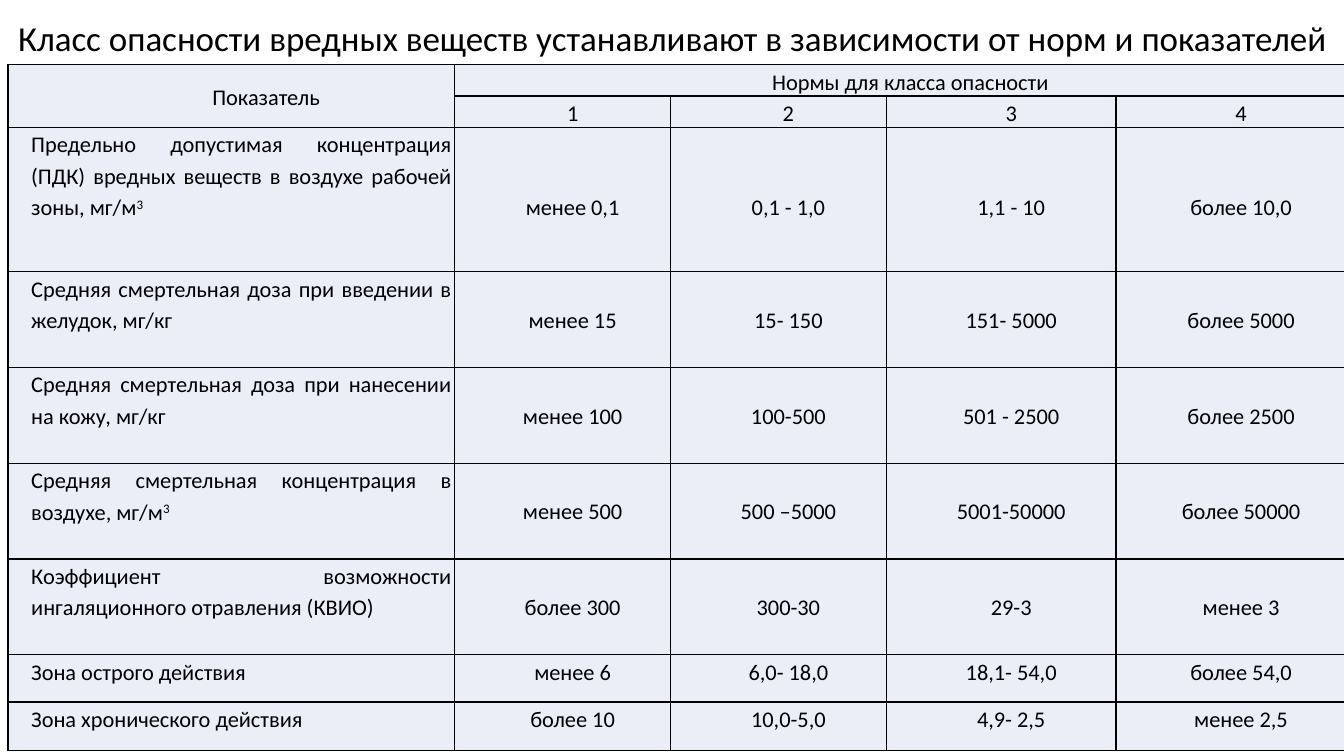
from dataclasses import dataclass

from lxml.etree import SubElement
from pptx import Presentation
from pptx.dml.color import RGBColor
from pptx.enum.text import MSO_ANCHOR as Anchor, MSO_AUTO_SIZE as AutoSize, PP_ALIGN as Align
from pptx.oxml.ns import qn
from pptx.table import Table, _Cell as Cell
from pptx.util import Inches, Pt

COLORS = {"text": "000000", "border": "000000", "cell": "EAEFF7"}
FONT = "Calibri"
LINE_HEIGHT = 0.31
HEADER_HEIGHT = 0.3
COLUMN_WIDTHS = (4.43, 2.14, 2.14, 2.28, 2.28)


@dataclass(frozen=True)
class Indicator:
    label: str
    norms: tuple[str, str, str, str]
    height: float
    lines_above: int = 0
    superscript: str = ""


INDICATORS = (
    Indicator("Предельно допустимая концентрация (ПДК) вредных веществ в воздухе рабочей зоны, мг/м",
              ("менее 0,1", "0,1 - 1,0", "1,1 - 10", "более 10,0"), 1.43, 2, "3"),
    Indicator("Средняя смертельная доза при введении в желудок, мг/кг",
              ("менее 15", "15- 150", "151- 5000", "более 5000"), 0.95, 1),
    Indicator("Средняя смертельная доза при нанесении на кожу, мг/кг",
              ("менее 100", "100-500", "501 - 2500", "более 2500"), 0.95, 1),
    Indicator("Средняя смертельная концентрация в воздухе, мг/м",
              ("менее 500", "500 –5000", "5001-50000", "более 50000"), 0.95, 1, "3"),
    Indicator("Коэффициент возможности ингаляционного отравления (КВИО)",
              ("более 300", "300-30", "29-3", "менее 3"), 0.95, 1),
    Indicator("Зона острого действия",
              ("менее 6", "6,0- 18,0", "18,1- 54,0", "более 54,0"), 0.47),
    Indicator("Зона хронического действия",
              ("более 10", "10,0-5,0", "4,9- 2,5", "менее 2,5"), 0.48),
)


def style_cell(cell: Cell) -> None:
    """Give a cell its borders, fill and margins."""
    properties = cell._tc.get_or_add_tcPr()
    for side in ("a:lnL", "a:lnR", "a:lnT", "a:lnB"):
        line = SubElement(properties, qn(side), w=str(Pt(1)))
        line_fill = SubElement(line, qn("a:solidFill"))
        SubElement(line_fill, qn("a:srgbClr"), val=COLORS["border"])
    cell.fill.solid()
    cell.fill.fore_color.rgb = RGBColor.from_string(COLORS["cell"])
    cell.margin_left = cell.margin_right = Inches(0.03)
    cell.margin_top = cell.margin_bottom = 0


def write_cell(cell: Cell, text: str, align: Align = Align.CENTER,
               anchor: Anchor = Anchor.TOP, first_indent: float = 0,
               lines_above: int = 0, superscript: str = "") -> None:
    """Write one formatted paragraph into a cell."""
    cell.vertical_anchor = anchor
    cell.margin_top = Inches(lines_above * LINE_HEIGHT)
    para = cell.text_frame.paragraphs[0]
    para.alignment = align
    para.line_spacing = 1.15
    indents = para._p.get_or_add_pPr()
    indents.set("marL", str(Inches(0.2)))
    indents.set("indent", str(Inches(first_indent)))
    para.font.name = FONT
    para.font.size = Pt(16)
    para.font.color.rgb = RGBColor.from_string(COLORS["text"])
    para.add_run().text = text
    if superscript:
        span = para.add_run()
        span.text = superscript
        span.font._element.set("baseline", "30000")


def fill_table(table: Table) -> None:
    """Size the grid and write the header and the indicators."""
    table.first_row = table.horz_banding = False
    for column, width in zip(table.columns, COLUMN_WIDTHS):
        column.width = Inches(width)
    heights = [HEADER_HEIGHT] * 2 + [item.height for item in INDICATORS]
    for row, height in zip(table.rows, heights):
        row.height = Inches(height)
    for cell in table.iter_cells():
        style_cell(cell)

    # Header
    table.cell(0, 0).merge(table.cell(1, 0))
    table.cell(0, 1).merge(table.cell(0, 4))
    write_cell(table.cell(0, 0), "Показатель", anchor=Anchor.MIDDLE, first_indent=0.49)
    write_cell(table.cell(0, 1), "Нормы для класса опасности", anchor=Anchor.MIDDLE)
    for hazard_class in range(1, 5):
        write_cell(table.cell(1, hazard_class), str(hazard_class), anchor=Anchor.MIDDLE)

    # Indicators
    for row_index, item in enumerate(INDICATORS, start=2):
        write_cell(table.cell(row_index, 0), item.label, Align.JUSTIFY,
                   superscript=item.superscript)
        for column_index, norm in enumerate(item.norms, start=1):
            write_cell(table.cell(row_index, column_index), norm,
                       lines_above=item.lines_above)


def main() -> None:
    deck = Presentation()
    deck.slide_width, deck.slide_height = Inches(13.33), Inches(7.5)
    page = deck.slides.add_slide(deck.slide_layouts[5])

    # Title
    title = page.shapes.title
    title.left, title.top = Inches(0.08), Inches(0.08)
    title.width, title.height = Inches(13.26), Inches(0.64)
    frame = title.text_frame
    frame.text = "Класс опасности вредных веществ устанавливают в зависимости от норм и показателей"
    frame.auto_size = AutoSize.NONE
    frame.word_wrap = True
    frame.vertical_anchor = Anchor.MIDDLE
    para = frame.paragraphs[0]
    para.alignment = Align.LEFT
    para.line_spacing = 0.9
    para.font.name = FONT
    para.font.size = Pt(25)
    para.font.color.rgb = RGBColor.from_string(COLORS["text"])

    # Table of norms
    holder = page.shapes.add_table(len(INDICATORS) + 2, len(COLUMN_WIDTHS), Inches(0.08),
                                   Inches(0.64), Inches(13.26), Inches(6.78))
    fill_table(holder.table)
    deck.save("out.pptx")


if __name__ == "__main__":
    main()
